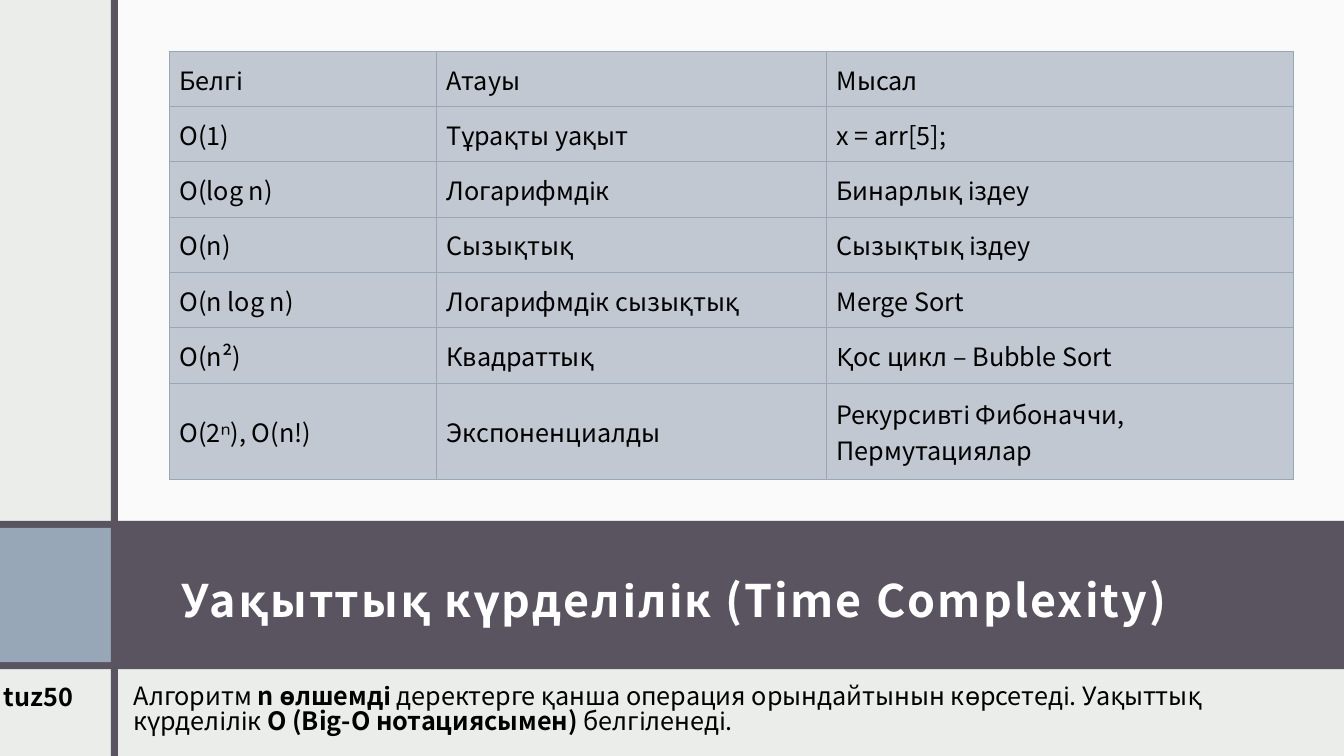
from lxml import etree
from pptx import Presentation
from pptx.dml.color import RGBColor
from pptx.enum.shapes import MSO_SHAPE
from pptx.enum.text import MSO_ANCHOR, PP_ALIGN
from pptx.oxml.ns import qn
from pptx.util import Pt

RECTANGLE = MSO_SHAPE.RECTANGLE
MIDDLE = MSO_ANCHOR.MIDDLE
TOP = MSO_ANCHOR.TOP
LEFT = PP_ALIGN.LEFT

PAPER = RGBColor(0xEB, 0xED, 0xEB)
PANEL = RGBColor(0xFA, 0xFA, 0xFA)
PLUM = RGBColor(0x59, 0x54, 0x60)
STEEL = RGBColor(0x97, 0xA7, 0xB8)
CELL = RGBColor(0xC1, 0xC8, 0xD2)
WHITE = RGBColor(0xFF, 0xFF, 0xFF)
BLACK = RGBColor(0, 0, 0)
FONT = "Noto Sans CJK JP"

TITLE = "Уақыттық күрделілік (Time Complexity)"
SIGNATURE = [("tuz50", True)]
SUMMARY = [
    ("Алгоритм ", False),
    ("n өлшемді ", True),
    ("деректерге қанша операция орындайтынын көрсетеді. Уақыттық күрделілік ", False),
    ("O (Big-O нотациясымен) ", True),
    ("белгіленеді.", False),
]
COMPLEXITIES = [
    ("Белгі", "Атауы", "Мысал"),
    ("O(1)", "Тұрақты уақыт", "x = arr[5];"),
    ("O(log n)", "Логарифмдік", "Бинарлық іздеу"),
    ("O(n)", "Сызықтық", "Сызықтық іздеу"),
    ("O(n log n)", "Логарифмдік сызықтық", "Merge Sort"),
    ("O(n²)", "Квадраттық", "Қос цикл – Bubble Sort"),
    ("O(2ⁿ), O(n!)", "Экспоненциалды", "Рекурсивті Фибоначчи, Пермутациялар"),
]
COLUMN_WIDTHS = [190.8, 278.64, 333.36]
ROW_HEIGHTS = [39.5] * 6 + [69]
WIDTH, HEIGHT = 960, 540
BAND_TOP, BAND_HEIGHT = 372, 106
RULE_LEFT, RULE_WIDTH = 79.2, 5.04
PANEL_LEFT = RULE_LEFT + RULE_WIDTH
BANDS = [
    (PANEL_LEFT, 0, WIDTH - PANEL_LEFT, BAND_TOP, PANEL),
    (0, BAND_TOP, WIDTH, BAND_HEIGHT, PLUM),
    (0, BAND_TOP + RULE_WIDTH, RULE_LEFT, BAND_HEIGHT - 2 * RULE_WIDTH, STEEL),
    (RULE_LEFT, 0, RULE_WIDTH, HEIGHT, PLUM),
]


def add_run(paragraph, text, size=18, color=BLACK, bold=False):
    run = paragraph.add_run()
    run.text = text
    run.font.name = FONT
    run.font.size = Pt(size)
    run.font.bold = bold
    run.font.color.rgb = color
    return run


def add_note(slide, box, parts, spacing):
    frame = slide.shapes.add_textbox(*map(Pt, box)).text_frame
    frame.word_wrap = True
    frame.paragraphs[0].line_spacing = spacing
    for text, bold in parts:
        add_run(frame.paragraphs[0], text, bold=bold)


def add_borders(cell):
    properties = cell._tc.get_or_add_tcPr()
    for position, side in enumerate(("lnL", "lnR", "lnT", "lnB")):
        line = etree.Element(qn(f"a:{side}"), w=str(Pt(0.75)))
        fill = etree.SubElement(line, qn("a:solidFill"))
        etree.SubElement(fill, qn("a:srgbClr"), val=str(STEEL))
        properties.insert(position, line)


def add_complexities(slide):
    table = slide.shapes.add_table(
        len(COMPLEXITIES), len(COLUMN_WIDTHS), Pt(121), Pt(36.7),
        Pt(sum(COLUMN_WIDTHS)), Pt(sum(ROW_HEIGHTS))).table
    for column, width in zip(table.columns, COLUMN_WIDTHS):
        column.width = Pt(width)
    for row, height, texts in zip(table.rows, ROW_HEIGHTS, COMPLEXITIES):
        row.height = Pt(height)
        for cell, text in zip(row.cells, texts):
            cell.fill.solid()
            cell.fill.fore_color.rgb = CELL
            cell.vertical_anchor = MIDDLE
            add_run(cell.text_frame.paragraphs[0], text)
            add_borders(cell)


def add_title(slide):
    title = slide.shapes.title
    slide.shapes._spTree.append(title._element)
    title.left, title.top, title.width, title.height = map(Pt, (121, 384, 788, 81))
    frame = title.text_frame
    frame.word_wrap = True
    frame.vertical_anchor = MIDDLE
    frame.margin_left = frame.margin_right = Pt(8.64)
    frame.margin_top, frame.margin_bottom = Pt(14.4), Pt(7.2)
    frame.paragraphs[0].alignment = LEFT
    run = add_run(frame.paragraphs[0], TITLE, 32, WHITE, True)
    run.font._element.set("spc", "150")


def main():
    deck = Presentation()
    deck.slide_width, deck.slide_height = Pt(WIDTH), Pt(HEIGHT)
    slide = deck.slides.add_slide(deck.slide_layouts[5])
    slide.background.fill.solid()
    slide.background.fill.fore_color.rgb = PAPER
    for *box, color in BANDS:
        band = slide.shapes.add_shape(RECTANGLE, *map(Pt, box))
        band.shadow.inherit = False
        band.fill.solid()
        band.fill.fore_color.rgb = color
        band.line.fill.background()
    add_title(slide)
    add_note(slide, (-4.3, 483, 480, 29), SIGNATURE, 1)
    add_note(slide, (88.2, 486, 872, 51), SUMMARY, 0.82)
    add_complexities(slide)
    deck.save("out.pptx")


if __name__ == "__main__":
    main()
